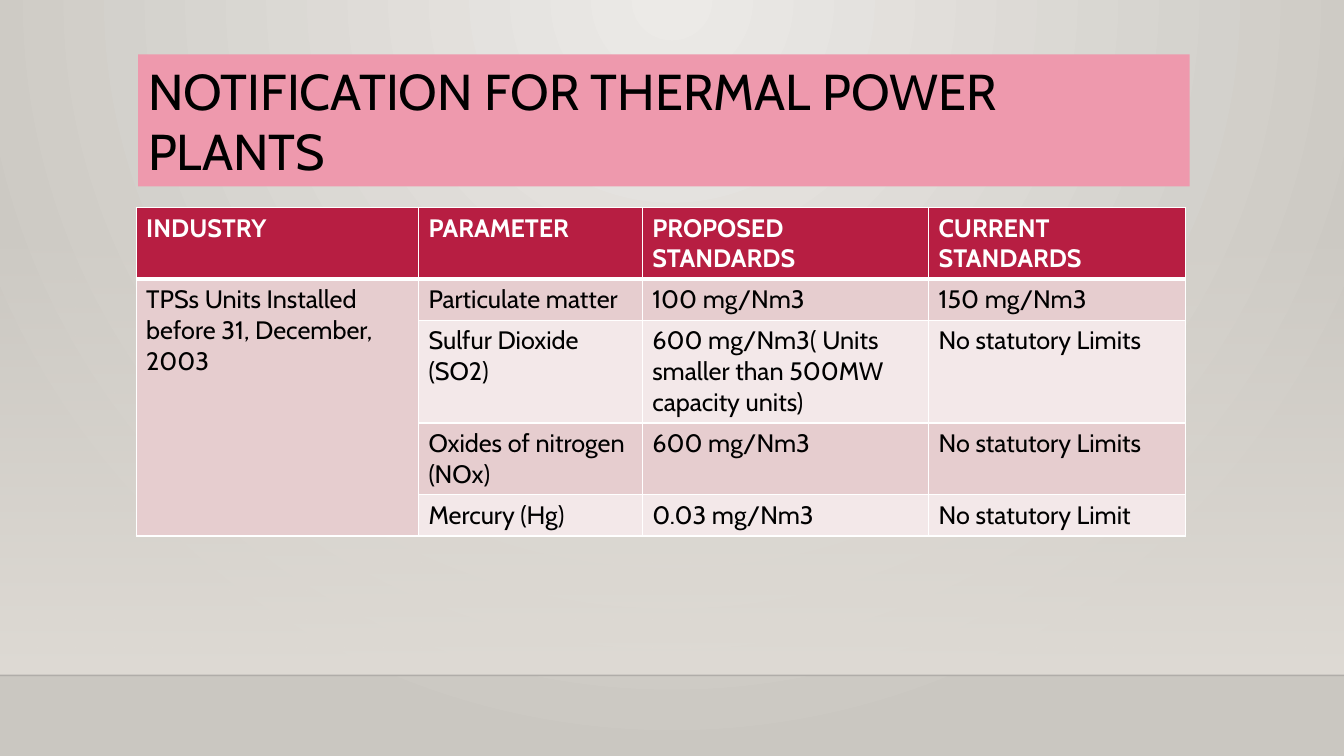
from dataclasses import dataclass

from lxml import etree
from pptx import Presentation
from pptx import util as u
from pptx.dml.color import RGBColor
from pptx.enum import shapes, text
from pptx.oxml.ns import qn

TITLE = "NOTIFICATION FOR THERMAL POWER PLANTS"
HEADERS = ["INDUSTRY", "PARAMETER", "PROPOSED STANDARDS", "CURRENT STANDARDS"]
INDUSTRY = "TPSs Units Installed before 31, December, 2003"
LIMITS = [
    ("Particulate matter", "100 mg/Nm3", "150 mg/Nm3"),
    ("Sulfur Dioxide\n(SO2)",
     "600 mg/Nm3( Units smaller than 500MW capacity units)",
     "No statutory Limits"),
    ("Oxides of nitrogen\n(NOx)", "600 mg/Nm3", "No statutory Limits"),
    ("Mercury (Hg)", "0.03 mg/Nm3", "No statutory Limit"),
]


@dataclass(frozen=True)
class Theme:
    font: str = "Cabin"
    title_size: int = 36
    table_size: int = 18
    ink: str = "000000"
    white: str = "FFFFFF"
    banner: str = "EE99AD"
    header: str = "B71E42"
    bands: tuple = ("E6CDCF", "F3E8E9")
    glow: tuple = ("ECEAE7", "CAC7C1")
    wall: str = "DFDBD5"
    floor_line: str = "000001"


THEME = Theme()
WIDTH, HEIGHT = 13.33, 7.5
WALL_TOP, FLOOR = 2.21, 6.7
BANNER = (1.37, 0.54, 10.43, 1.31)
TABLE_LEFT, TABLE_TOP = 1.35, 2.06
COLUMNS = (2.8, 2.22, 2.84, 2.55)
ROW = 0.41


def color(value):
    return RGBColor.from_string(value)


def add_xml(parent, tag, **attributes):
    return etree.SubElement(parent, qn(tag), **attributes)


def set_alpha(parent, percent):
    """Make the first colour found under parent partly transparent."""
    tint = next(parent.iter(qn("a:srgbClr")))
    add_xml(tint, "a:alpha", val=str(percent * 1000))


def fill_gradient(fill, colors):
    fill.gradient()
    for stop, value, place in zip(fill.gradient_stops, colors, (0, 1)):
        stop.color.rgb = color(value)
        stop.position = place


def style_text(frame, size, ink, bold=False):
    for para in frame.paragraphs:
        para.alignment = text.PP_ALIGN.LEFT
        for span in para.runs:
            span.font.name = THEME.font
            span.font.size = u.Pt(size)
            span.font.bold = bold
            span.font.color.rgb = color(ink)


def add_rectangle(page, left, top, width, height):
    box = page.shapes.add_shape(
        shapes.MSO_SHAPE.RECTANGLE,
        *(u.Inches(n) for n in (left, top, width, height)))
    box.shadow.inherit = False
    box.line.fill.background()
    return box


def add_backdrop(page):
    fill_gradient(page.background.fill, THEME.glow)
    gradient = next(page.element.iter(qn("a:gradFill")))
    gradient.remove(gradient.find(qn("a:lin")))
    circle = add_xml(gradient, "a:path", path="circle")
    add_xml(circle, "a:fillToRect", l="43000", t="0", r="43000", b="100000")

    wall = add_rectangle(page, 0, WALL_TOP, WIDTH, FLOOR - WALL_TOP)
    fill_gradient(wall.fill, (THEME.wall, THEME.wall))
    wall.fill.gradient_angle = 270
    set_alpha(wall.element.spPr, 0)

    edge = page.shapes.add_connector(
        shapes.MSO_CONNECTOR.STRAIGHT,
        0, u.Inches(FLOOR), u.Inches(WIDTH), u.Inches(FLOOR))
    edge.line.width = u.Pt(1)
    edge.line.color.rgb = color(THEME.floor_line)
    set_alpha(edge.element.spPr, 20)
    add_xml(edge.element.spPr, "a:effectLst")


def add_title(page):
    banner = add_rectangle(page, *BANNER)
    banner.fill.solid()
    banner.fill.fore_color.rgb = color(THEME.banner)
    frame = banner.text_frame
    frame.word_wrap = True
    frame.vertical_anchor = text.MSO_ANCHOR.MIDDLE
    frame.text = TITLE
    style_text(frame, THEME.title_size, THEME.ink)


def style_cell(cell, fill, bottom):
    """Draw white borders, the lower one bottom points wide, then fill."""
    properties = cell._tc.get_or_add_tcPr()
    for side, points in (("L", 1), ("R", 1), ("T", 1), ("B", bottom)):
        border = add_xml(properties, f"a:ln{side}", w=str(u.Pt(points)))
        add_xml(add_xml(border, "a:solidFill"), "a:srgbClr", val=THEME.white)
    cell.fill.solid()
    cell.fill.fore_color.rgb = color(fill)


def add_standards(page):
    rows = [HEADERS] + [
        ("" if i else INDUSTRY, *limit) for i, limit in enumerate(LIMITS)]
    table = page.shapes.add_table(
        len(rows), len(COLUMNS), u.Inches(TABLE_LEFT), u.Inches(TABLE_TOP),
        u.Inches(sum(COLUMNS)), u.Inches(ROW * len(rows))).table
    table.horz_banding = False
    for column, width in zip(table.columns, COLUMNS):
        column.width = u.Inches(width)
    for r, words in enumerate(rows):
        table.rows[r].height = u.Inches(ROW)
        is_header = r == 0
        for c, label in enumerate(words):
            cell = table.cell(r, c)
            band = THEME.bands[0 if c == 0 else (r - 1) % 2]
            style_cell(cell, THEME.header if is_header else band,
                       3 if is_header else 1)
            cell.text_frame.text = label
            style_text(cell.text_frame, THEME.table_size,
                       THEME.white if is_header else THEME.ink, is_header)
    table.cell(1, 0).merge(table.cell(len(LIMITS), 0))


def main():
    deck = Presentation()
    deck.slide_width, deck.slide_height = u.Inches(WIDTH), u.Inches(HEIGHT)
    page = deck.slides.add_slide(deck.slide_layouts[6])
    add_backdrop(page)
    add_title(page)
    add_standards(page)
    deck.save("out.pptx")


if __name__ == "__main__":
    main()
